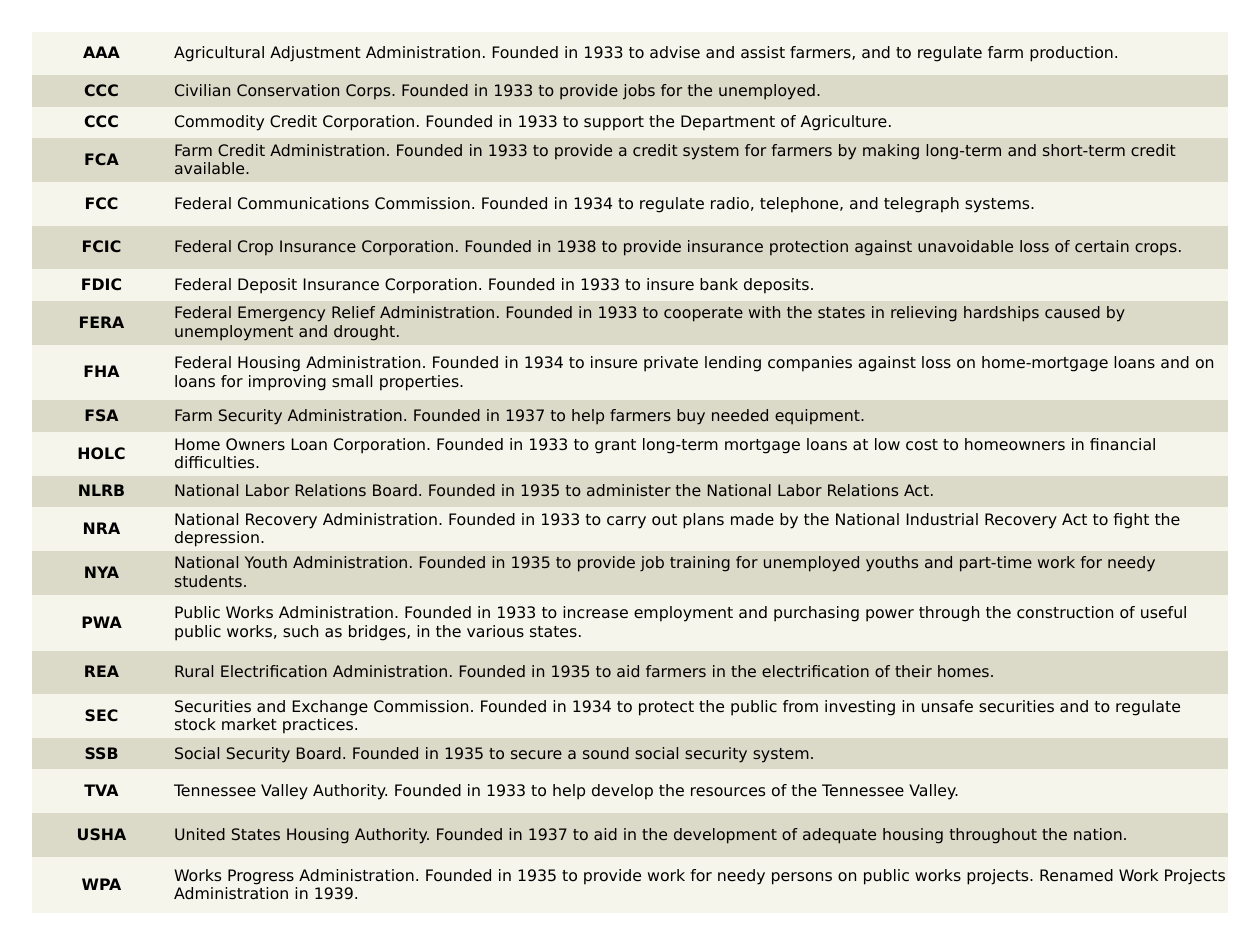
from pptx import Presentation
from pptx.dml.color import RGBColor
from pptx.enum.text import MSO_ANCHOR as Anchor, PP_ALIGN as Align
from pptx.util import Pt

FONT = "DejaVu Sans"
BLACK = RGBColor(0x00, 0x00, 0x00)
CREAM = RGBColor(0xF6, 0xF5, 0xEB)
SAGE = RGBColor(0xDB, 0xD9, 0xC7)
PLAIN_STYLE = "{2D5ABB26-0587-4C30-8999-92F81FD0307C}"

SHORT, MEDIUM, TALL = 18, 25, 32
COLUMN_WIDTHS = (80, 604)

AGENCIES = [
    ("AAA", MEDIUM, "Agricultural Adjustment Administration. Founded in 1933 to advise and assist farmers, "
     "and to regulate farm production."),
    ("CCC", SHORT, "Civilian Conservation Corps. Founded in 1933 to provide jobs for the unemployed."),
    ("CCC", SHORT, "Commodity Credit Corporation. Founded in 1933 to support the Department of Agriculture."),
    ("FCA", MEDIUM, "Farm Credit Administration. Founded in 1933 to provide a credit system for farmers "
     "by making long-term and short-term credit available."),
    ("FCC", MEDIUM, "Federal Communications Commission. Founded in 1934 to regulate radio, telephone, "
     "and telegraph systems."),
    ("FCIC", MEDIUM, "Federal Crop Insurance Corporation. Founded in 1938 to provide insurance protection "
     "against unavoidable loss of certain crops."),
    ("FDIC", SHORT, "Federal Deposit Insurance Corporation. Founded in 1933 to insure bank deposits."),
    ("FERA", MEDIUM, "Federal Emergency Relief Administration. Founded in 1933 to cooperate with the states "
     "in relieving hardships caused by unemployment and drought."),
    ("FHA", TALL, "Federal Housing Administration. Founded in 1934 to insure private lending companies "
     "against loss on home-mortgage loans and on loans for improving small properties."),
    ("FSA", SHORT, "Farm Security Administration. Founded in 1937 to help farmers buy needed equipment."),
    ("HOLC", MEDIUM, "Home Owners Loan Corporation. Founded in 1933 to grant long-term mortgage loans "
     "at low cost to homeowners in financial difficulties."),
    ("NLRB", SHORT, "National Labor Relations Board. Founded in 1935 to administer the National Labor "
     "Relations Act."),
    ("NRA", MEDIUM, "National Recovery Administration. Founded in 1933 to carry out plans made by the "
     "National Industrial Recovery Act to fight the depression."),
    ("NYA", MEDIUM, "National Youth Administration. Founded in 1935 to provide job training for unemployed "
     "youths and part-time work for needy students."),
    ("PWA", TALL, "Public Works Administration. Founded in 1933 to increase employment and purchasing power "
     "through the construction of useful public works, such as bridges, in the various states."),
    ("REA", MEDIUM, "Rural Electrification Administration. Founded in 1935 to aid farmers in the "
     "electrification of their homes."),
    ("SEC", MEDIUM, "Securities and Exchange Commission. Founded in 1934 to protect the public from "
     "investing in unsafe securities and to regulate stock market practices."),
    ("SSB", SHORT, "Social Security Board. Founded in 1935 to secure a sound social security system."),
    ("TVA", MEDIUM, "Tennessee Valley Authority. Founded in 1933 to help develop the resources of the "
     "Tennessee Valley."),
    ("USHA", MEDIUM, "United States Housing Authority. Founded in 1937 to aid in the development of adequate "
     "housing throughout the nation."),
    ("WPA", TALL, "Works Progress Administration. Founded in 1935 to provide work for needy persons on "
     "public works projects. Renamed Work Projects Administration in 1939."),
]


def fill_cell(cell, text, color, align, bold):
    cell.fill.solid()
    cell.fill.fore_color.rgb = color
    cell.vertical_anchor = Anchor.MIDDLE
    cell.margin_left = cell.margin_right = Pt(1.5)
    cell.margin_top = cell.margin_bottom = Pt(1.5)
    cell.text = text
    para = cell.text_frame.paragraphs[0]
    para.alignment = align
    para.font.name = FONT
    para.font.size = Pt(9)
    para.font.bold = bold
    para.font.color.rgb = BLACK


def add_plain_table(page, left, top, widths, heights):
    frame = page.shapes.add_table(len(heights), len(widths), Pt(left), Pt(top),
                                  Pt(sum(widths)), Pt(sum(heights)))
    table = frame.table
    table.first_row = table.horz_banding = False
    table._tbl.tblPr.find("{*}tableStyleId").text = PLAIN_STYLE
    for column, width in zip(table.columns, widths):
        column.width = Pt(width)
    for row, height in zip(table.rows, heights):
        row.height = Pt(height)
    return table


def main():
    deck = Presentation()
    deck.slide_width, deck.slide_height = Pt(720), Pt(540)
    page = deck.slides.add_slide(deck.slide_layouts[6])
    heights = [height for _, height, _ in AGENCIES]
    table = add_plain_table(page, 18, 18, COLUMN_WIDTHS, heights)
    for index, (initials, _, description) in enumerate(AGENCIES):
        color = SAGE if index % 2 else CREAM
        fill_cell(table.cell(index, 0), initials, color, Align.CENTER, True)
        fill_cell(table.cell(index, 1), description, color, Align.LEFT, False)
    deck.save("out.pptx")


if __name__ == "__main__":
    main()
